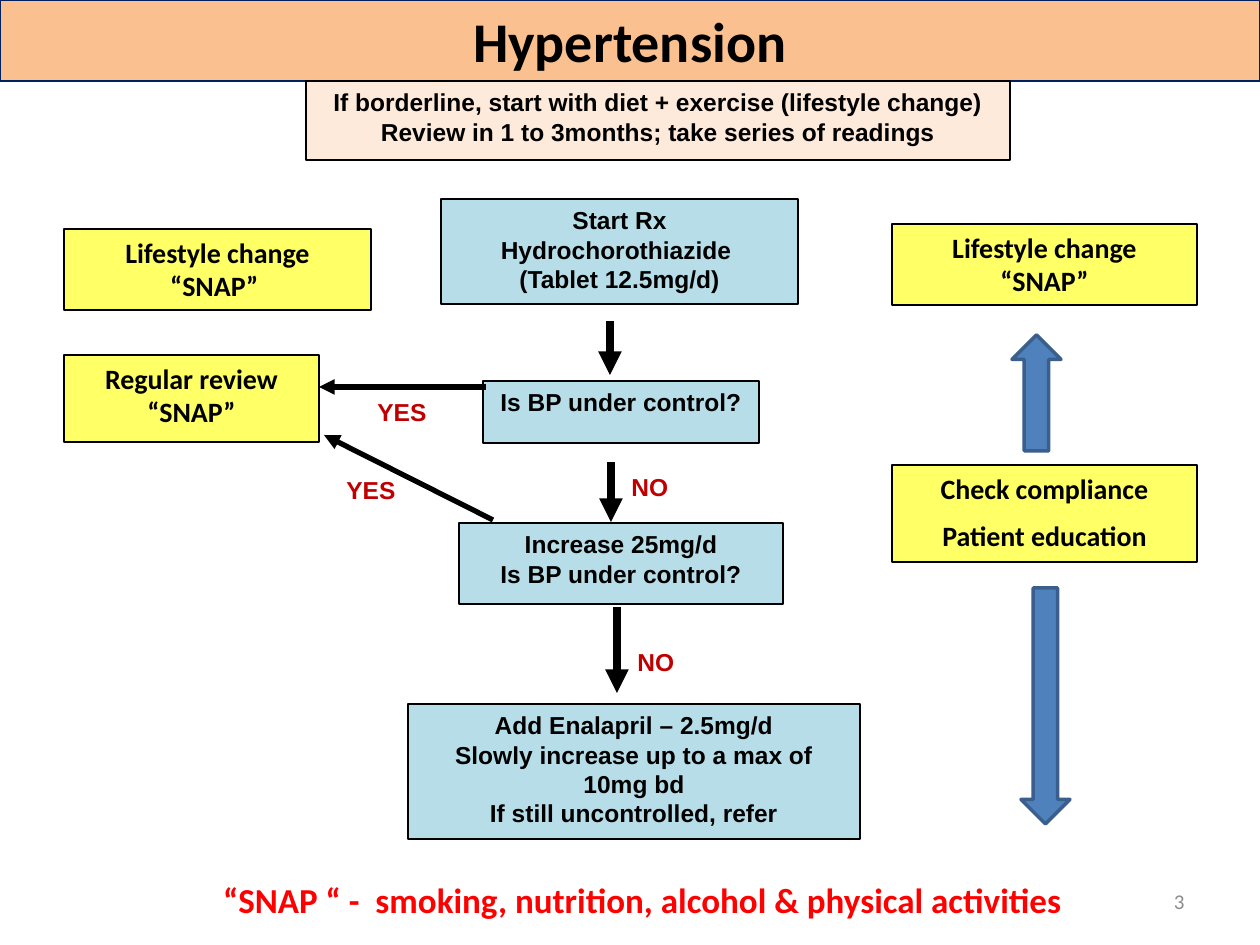
from dataclasses import dataclass

from lxml.etree import SubElement
from pptx import Presentation
from pptx.dml.color import RGBColor
from pptx.enum.shapes import MSO_CONNECTOR, MSO_SHAPE
from pptx.enum.text import MSO_ANCHOR, PP_ALIGN
from pptx.oxml.ns import qn
from pptx.util import Emu, Pt

PX_PER_INCH = 126
COLORS = {
    "black": "000000", "title": "FAC090", "navy": "002060", "cream": "FDEADA",
    "yellow": "FFFF66", "blue": "B7DEE8", "arrow": "4F81BD", "arrow_edge": "3A5F8C",
    "answer": "C00000", "red": "FF0000", "gray": "8C8C8C",
}


@dataclass(frozen=True)
class Area:
    left: int
    top: int
    width: int
    height: int


@dataclass(frozen=True)
class Box:
    area: Area
    fill: str
    lines: tuple[str, ...]
    font: str = "Arial"
    size: int = 14
    edge: str = "black"
    space_before: int = 0


@dataclass(frozen=True)
class Flow:
    start: tuple[int, int]
    end: tuple[int, int]
    weight: float = 4.5


@dataclass(frozen=True)
class Label:
    area: Area
    text: str
    font: str = "Arial"
    size: int = 14
    color: str = "answer"
    bold: bool = True
    align: PP_ALIGN = PP_ALIGN.LEFT
    anchor: MSO_ANCHOR = MSO_ANCHOR.TOP


SNAP = ("Lifestyle change", "“SNAP”")
BOXES = [
    Box(Area(0, 0, 1260, 81), "title", ("Hypertension",), "Calibri", 32, "navy"),
    Box(Area(306, 81, 704, 79), "cream",
        ("If borderline, start with diet + exercise (lifestyle change)",
         "Review in 1 to 3months; take series of readings")),
    Box(Area(441, 199, 357, 105), "blue",
        ("Start Rx", "Hydrochorothiazide ", "(Tablet 12.5mg/d)")),
    Box(Area(483, 381, 276, 62), "blue", ("Is BP under control?",)),
    Box(Area(459, 523, 324, 81), "blue", ("Increase 25mg/d", "Is BP under control?")),
    Box(Area(408, 704, 452, 135), "blue",
        ("Add Enalapril – 2.5mg/d", "Slowly increase up to a max of", "10mg bd",
         "If still uncontrolled, refer")),
    Box(Area(64, 229, 307, 81), "yellow", ("Lifestyle change\v“SNAP” ",), "Calibri", 16),
    Box(Area(64, 355, 255, 87), "yellow", ("Regular review", "“SNAP”"), "Calibri", 16),
    Box(Area(892, 224, 305, 81), "yellow", SNAP, "Calibri", 16),
    Box(Area(892, 465, 305, 97), "yellow", ("Check compliance", "Patient education"),
        "Calibri", 16, space_before=8),
]
FLOWS = [
    Flow((486, 387), (319, 387), 3),
    Flow((493, 520), (324, 435), 3),
    Flow((610, 321), (610, 375)),
    Flow((611, 462), (611, 522)),
    Flow((617, 607), (617, 693)),
]
LABELS = [
    Label(Area(365, 391, 76, 43), "YES"),
    Label(Area(334, 469, 76, 37), "YES"),
    Label(Area(619, 466, 76, 43), "NO"),
    Label(Area(625, 641, 91, 63), "NO"),
    Label(Area(192, 872, 901, 55),
          "“SNAP “ -  smoking, nutrition, alcohol & physical activities",
          "Calibri", 20, "red", align=PP_ALIGN.CENTER),
    Label(Area(903, 876, 294, 50), "3", "Calibri", 12, "gray", bold=False,
          align=PP_ALIGN.RIGHT, anchor=MSO_ANCHOR.MIDDLE),
]
BLOCK_ARROWS = [
    (MSO_SHAPE.UP_ARROW, Area(1012, 335, 49, 116)),
    (MSO_SHAPE.DOWN_ARROW, Area(1021, 588, 49, 236)),
]


def px(value: int) -> Emu:
    return Emu(round(value * 914400 / PX_PER_INCH))


def bounds(area: Area) -> tuple[Emu, ...]:
    return tuple(px(v) for v in (area.left, area.top, area.width, area.height))


def rgb(name: str) -> RGBColor:
    return RGBColor.from_string(COLORS[name])


def write(tf, lines: tuple[str, ...], *, font: str, size: int, color: str = "black",
          bold: bool = True, align: PP_ALIGN = PP_ALIGN.CENTER,
          anchor: MSO_ANCHOR = MSO_ANCHOR.TOP, space_before: int = 0) -> None:
    """Write one paragraph per line; the space goes between paragraphs only."""
    tf.word_wrap = True
    tf.vertical_anchor = anchor
    for i, line in enumerate(lines):
        p = tf.paragraphs[0] if i == 0 else tf.add_paragraph()
        p.text = line
        p.alignment = align
        p.space_before = Pt(space_before if i else 0)
        for r in p.runs:
            r.font.name, r.font.size, r.font.bold = font, Pt(size), bold
            r.font.color.rgb = rgb(color)


def add_filled(slide, kind: MSO_SHAPE, area: Area, fill: str, edge: str, weight: float):
    sp = slide.shapes.add_shape(kind, *bounds(area))
    sp.shadow.inherit = False
    sp.fill.solid()
    sp.fill.fore_color.rgb = rgb(fill)
    sp.line.color.rgb = rgb(edge)
    sp.line.width = Pt(weight)
    return sp


def add_box(slide, box: Box) -> None:
    sp = add_filled(slide, MSO_SHAPE.RECTANGLE, box.area, box.fill, box.edge, 0.75)
    write(sp.text_frame, box.lines, font=box.font, size=box.size,
          space_before=box.space_before)


def add_flow(slide, flow: Flow) -> None:
    ends = [px(v) for v in (*flow.start, *flow.end)]
    line = slide.shapes.add_connector(MSO_CONNECTOR.STRAIGHT, *ends)
    line.line.color.rgb = rgb("black")
    line.line.width = Pt(flow.weight)
    SubElement(line.line._get_or_add_ln(), qn("a:tailEnd"), type="triangle")
    SubElement(line._element.spPr, qn("a:effectLst"))


def add_label(slide, label: Label) -> None:
    tf = slide.shapes.add_textbox(*bounds(label.area)).text_frame
    write(tf, (label.text,), font=label.font, size=label.size, color=label.color,
          bold=label.bold, align=label.align, anchor=label.anchor)


def main() -> None:
    prs = Presentation()
    prs.slide_width, prs.slide_height = px(1260), px(945)
    slide = prs.slides.add_slide(prs.slide_layouts[6])
    for box in BOXES:
        add_box(slide, box)
    for flow in FLOWS:
        add_flow(slide, flow)
    for kind, area in BLOCK_ARROWS:
        add_filled(slide, kind, area, "arrow", "arrow_edge", 2)
    for label in LABELS:
        add_label(slide, label)
    prs.save("out.pptx")


if __name__ == "__main__":
    main()
